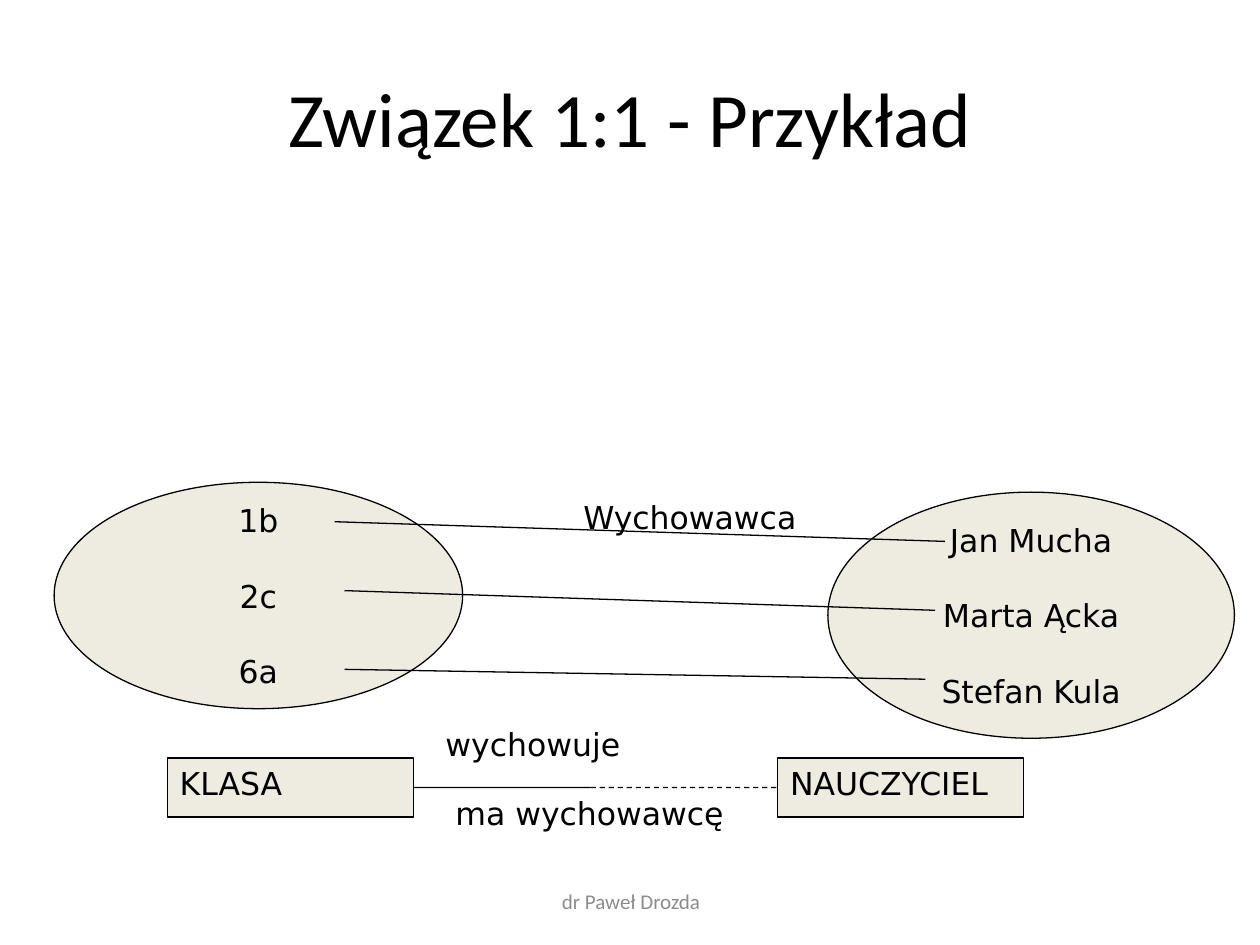
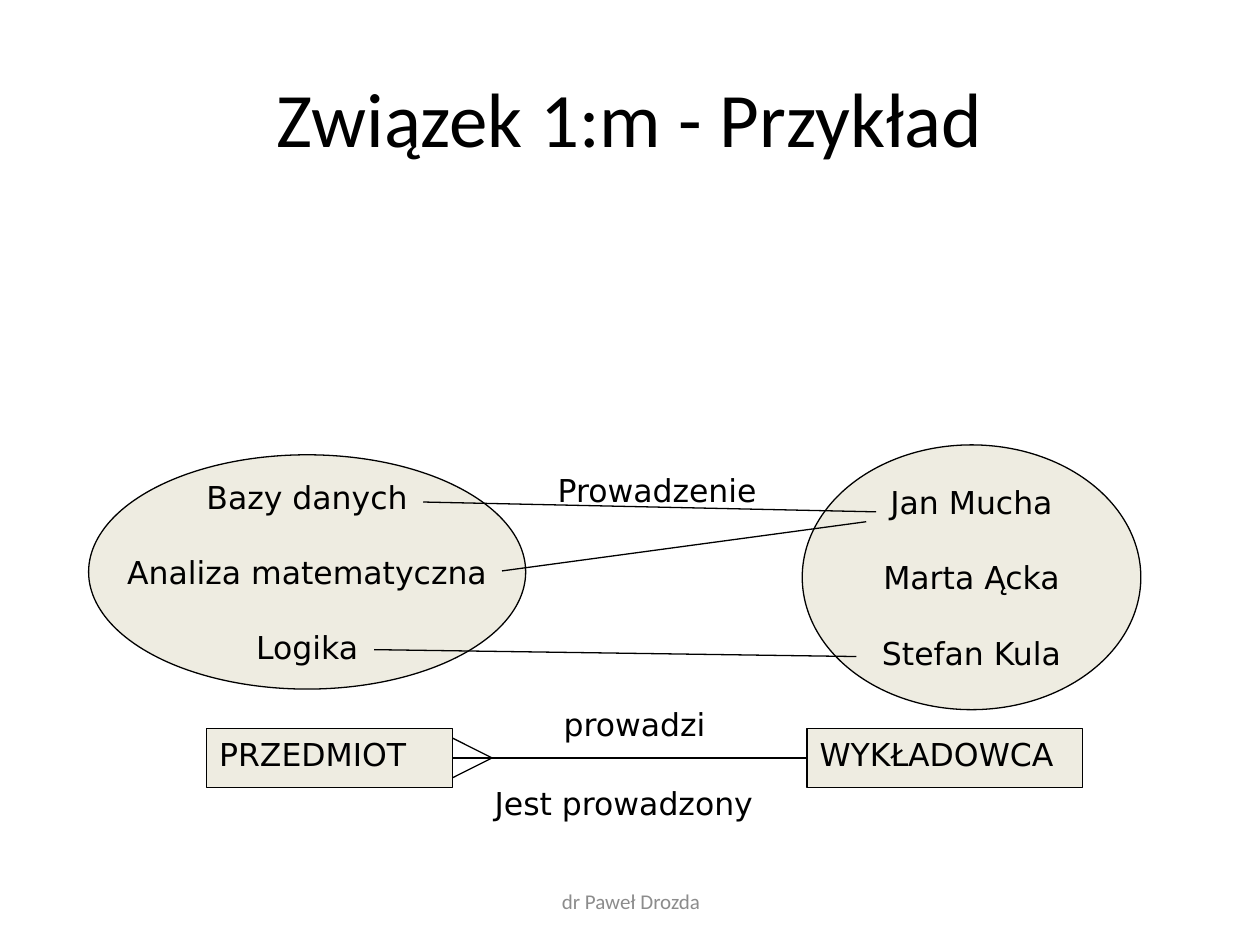
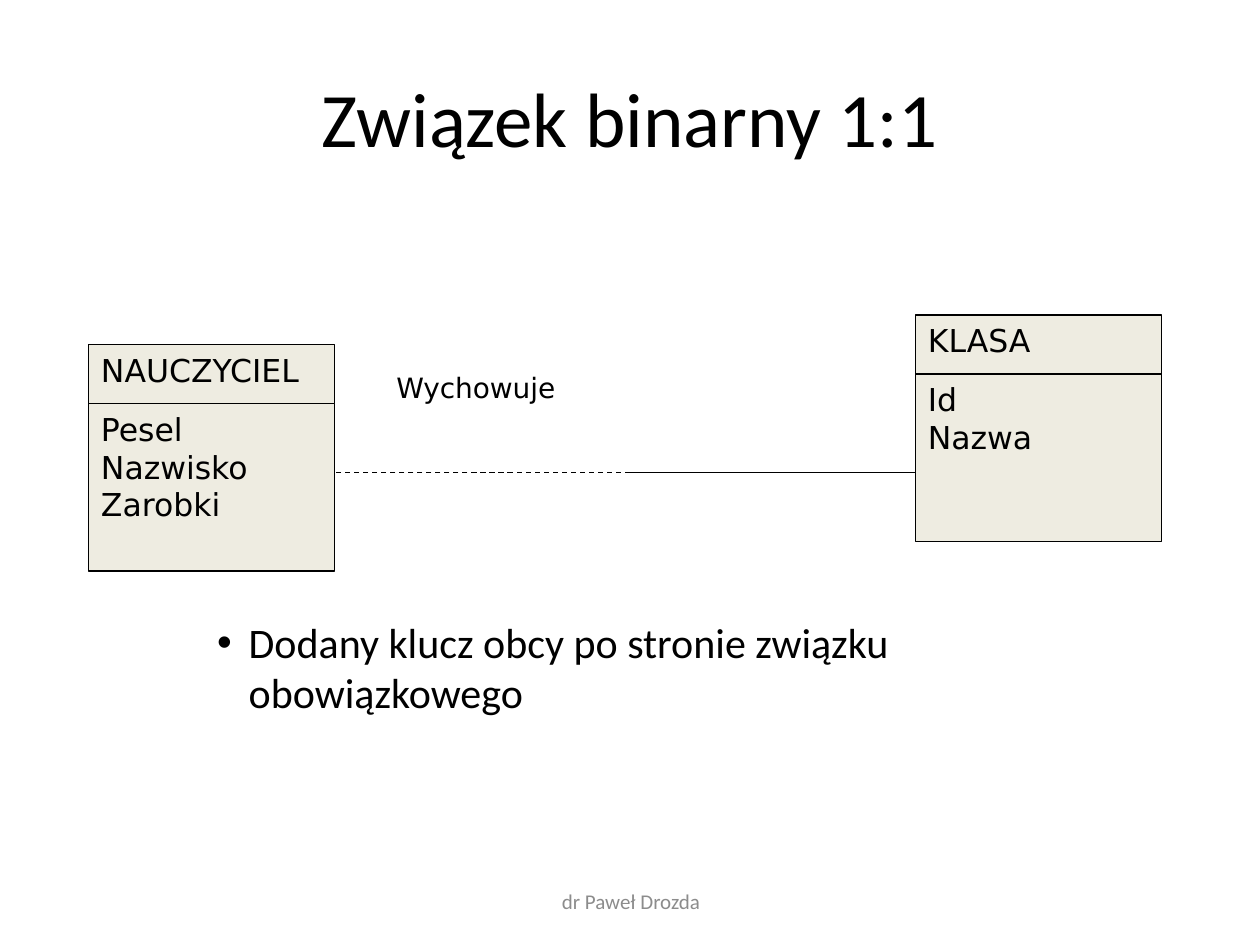
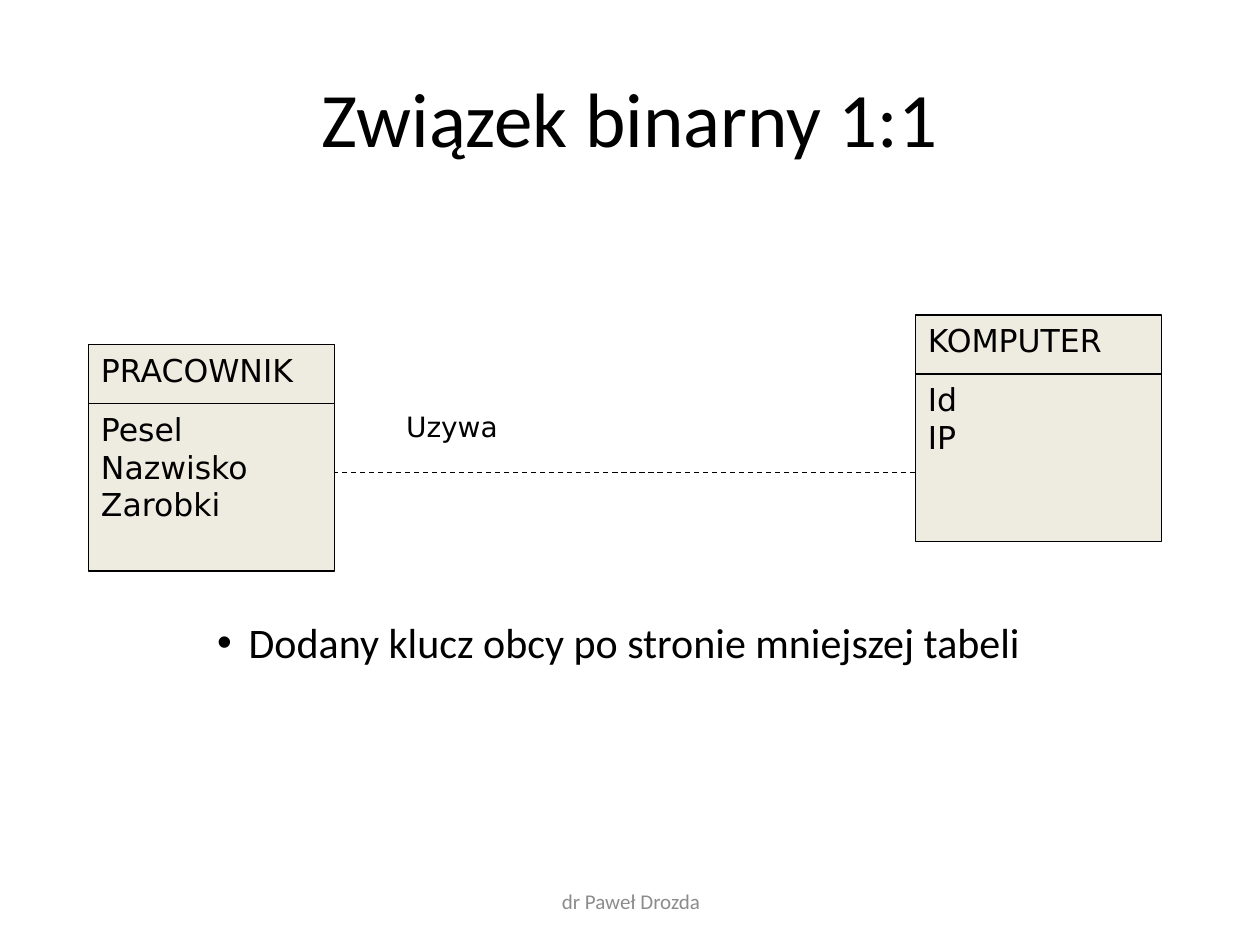
from pptx import Presentation
from pptx.dml.color import RGBColor
from pptx.enum.dml import MSO_LINE
from pptx.enum.shapes import MSO_CONNECTOR, MSO_SHAPE
from pptx.enum.text import MSO_ANCHOR, MSO_AUTO_SIZE, PP_ALIGN
from pptx.oxml.ns import qn
from pptx.util import Inches, Pt
from lxml import etree

RECT, OVAL = MSO_SHAPE.RECTANGLE, MSO_SHAPE.OVAL
STRAIGHT, DASH = MSO_CONNECTOR.STRAIGHT, MSO_LINE.DASH
TOP, MIDDLE = MSO_ANCHOR.TOP, MSO_ANCHOR.MIDDLE
LEFT, CENTER = PP_ALIGN.LEFT, PP_ALIGN.CENTER
GROW = MSO_AUTO_SIZE.SHAPE_TO_FIT_TEXT
LEFT_SIDE, RIGHT_SIDE = 1, 3

INK, PAPER, GREY = "000000", "EEECE1", "8C8C8C"
HEADING_FONT, DIAGRAM_FONT = "Calibri", "DejaVu Sans"
AUTHOR = "dr Paweł Drozda"

# All places are in cells of a grid, 128 columns by 96 rows.
WIDTH, HEIGHT, COLUMNS = 10, 7.5, 128
TITLE_AREA = (6.4, 3.84, 115.2, 16)
FOOTER_AREA = (43.8, 89, 40.6, 5.1)
BODY_AREA = (8, 62, 112, 22.3)
ENTITY_W, HEADER_H, ATTRIBUTES_H, LABEL_H = 25, 6, 17, 5.1
FOOT_LENGTH, FOOT_SPREAD = 4, 2
TEACHERS = ["Jan Mucha", "Marta Ącka", "Stefan Kula"]

EXAMPLES = [
    {
        "title": "Związek 1:1 - Przykład",
        "sets": [
            (["1b", "2c", "6a"], (5.5, 49, 41.5, 23)),
            (TEACHERS, (84.1, 50, 41.3, 25)),
        ],
        "pairs": [((96, 55), (34, 53)), ((95, 62), (35, 60)), ((94, 69), (35, 68))],
        "relation": ("Wychowawca", 58, 50),
        "entities": [("KLASA", 17, ENTITY_W), ("NAUCZYCIEL", 79, ENTITY_W)],
        "entity_row": 77,
        "optional_from": 60,
        "many": False,
        "roles": [("wychowuje", 44, 73, 20.5), ("ma wychowawcę", 45, 80, 29.8)],
    },
    {
        "title": "Związek 1:m - Przykład",
        "sets": [
            (["Bazy danych", "Analiza matematyczna", "Logika"], (9, 46.2, 44.4, 23.8)),
            (TEACHERS, (81.5, 45.2, 34.4, 26.9)),
        ],
        "pairs": [((89, 52), (43, 51)), ((88, 53), (51, 58)), ((87, 66.7), (38, 66))],
        "relation": ("Prowadzenie", 55.4, 47.2),
        "entities": [("PRZEDMIOT", 21, ENTITY_W), ("WYKŁADOWCA", 82, 28)],
        "entity_row": 74,
        "optional_from": None,
        "many": True,
        "roles": [("prowadzi", 56, 71, 17.2), ("Jest prowadzony", 49, 79, 29.6)],
    },
]

ENTITY_PLACES = [(9, 35), (93, 32)]
RELATION_ROW, RELATION_MIDDLE = 48, 64
PERSON = ["Pesel", "Nazwisko", "Zarobki"]
BINARIES = [
    {
        "title": "Związek binarny 1:1",
        "entities": [("NAUCZYCIEL", PERSON), ("KLASA", ["Id", "Nazwa"])],
        "relation": ("Wychowuje", 39, 37),
        "right_required": True,
        "rule": "Dodany klucz obcy po stronie związku obowiązkowego",
    },
    {
        "title": "Związek binarny 1:1",
        "entities": [("PRACOWNIK", PERSON), ("KOMPUTER", ["Id", "IP"])],
        "relation": ("Uzywa", 40, 41),
        "right_required": False,
        "rule": "Dodany klucz obcy po stronie mniejszej tabeli",
    },
]


def cells(*counts):
    return [Inches(count * WIDTH / COLUMNS) for count in counts]


def color(hex_code):
    return RGBColor.from_string(hex_code)


def write(shape, lines, size=18, font=DIAGRAM_FONT, ink=INK, align=LEFT,
          anchor=TOP, wrap=True, gap=0):
    frame = shape.text_frame
    frame.word_wrap = wrap
    frame.vertical_anchor = anchor
    for number, line in enumerate(lines):
        paragraph = frame.add_paragraph() if number else frame.paragraphs[0]
        paragraph.alignment = align
        if number and gap:
            paragraph.space_before = Pt(gap)
        run = paragraph.add_run()
        run.text = line
        run.font.size = Pt(size)
        run.font.name = font
        run.font.color.rgb = color(ink)


def add_text(slide, text, area, **style):
    box = slide.shapes.add_textbox(*cells(*area))
    write(box, [text], **style)
    return box


def add_label(slide, text, area, **style):
    add_text(slide, text, area, **style).text_frame.auto_size = GROW


def add_figure(slide, kind, lines, area, **style):
    figure = slide.shapes.add_shape(kind, *cells(*area))
    figure.shadow.inherit = False
    figure.fill.solid()
    figure.fill.fore_color.rgb = color(PAPER)
    figure.line.color.rgb = color(INK)
    figure.line.width = Pt(0.75)
    write(figure, lines, **style)
    return figure


def add_line(slide, start, end, dashed=False):
    line = slide.shapes.add_connector(STRAIGHT, *cells(*start, *end))
    line.line.color.rgb = color(INK)
    line.line.width = Pt(0.75)
    if dashed:
        line.line.dash_style = DASH
    etree.SubElement(line._element.spPr, qn("a:effectLst"))
    return line


def add_rule(slide, text):
    """Add the bulleted conclusion under a diagram."""
    box = add_text(slide, text, BODY_AREA, size=24, font=HEADING_FONT)
    properties = box.text_frame.paragraphs[0]._p.get_or_add_pPr()
    properties.set("marL", str(Inches(1.25)))
    properties.set("indent", str(Inches(-0.25)))
    etree.SubElement(properties, qn("a:buFont")).set("typeface", "Arial")
    etree.SubElement(properties, qn("a:buChar")).set("char", "•")


def start_slide(deck, title):
    slide = deck.slides.add_slide(deck.slide_layouts[6])
    centred = {"font": HEADING_FONT, "align": CENTER, "anchor": MIDDLE}
    add_text(slide, title, TITLE_AREA, size=44, **centred)
    add_text(slide, AUTHOR, FOOTER_AREA, size=12, ink=GREY, **centred)
    return slide


def add_example(deck, example):
    slide = start_slide(deck, example["title"])
    for members, area in example["sets"]:
        add_figure(slide, OVAL, members, area, align=CENTER, anchor=MIDDLE,
                   wrap=False, gap=21.5)
    for start, end in example["pairs"]:
        add_line(slide, start, end)
    relation, x, y = example["relation"]
    add_label(slide, relation, (x, y, 28.2, LABEL_H))

    row = example["entity_row"]
    left, right = [add_figure(slide, RECT, [name], (x, row, width, HEADER_H))
                   for name, x, width in example["entities"]]
    (_, left_x, left_width), (_, right_x, _) = example["entities"]
    side, axis = left_x + left_width, row + HEADER_H / 2
    split = example["optional_from"]
    first = add_line(slide, (side, axis), (split or right_x, axis))
    first.begin_connect(left, RIGHT_SIDE)
    last = add_line(slide, (split, axis), (right_x, axis), dashed=True) if split else first
    last.end_connect(right, LEFT_SIDE)
    if example["many"]:
        for spread in (-FOOT_SPREAD, FOOT_SPREAD):
            add_line(slide, (side + FOOT_LENGTH, axis), (side, axis + spread))
    for role, x, y, width in example["roles"]:
        add_label(slide, role, (x, y, width, LABEL_H), wrap=False)


def add_binary(deck, binary):
    slide = start_slide(deck, binary["title"])
    add_rule(slide, binary["rule"])
    for (name, attributes), (x, y) in zip(binary["entities"], ENTITY_PLACES):
        add_figure(slide, RECT, attributes, (x, y + HEADER_H, ENTITY_W, ATTRIBUTES_H))
        add_figure(slide, RECT, [name], (x, y, ENTITY_W, HEADER_H))
    relation, x, y = binary["relation"]
    add_label(slide, relation, (x, y, 23, 8.2), size=16)

    left, right = ENTITY_PLACES[0][0] + ENTITY_W, ENTITY_PLACES[1][0]
    dash_end = RELATION_MIDDLE if binary["right_required"] else right
    add_line(slide, (dash_end, RELATION_ROW), (left, RELATION_ROW), dashed=True)
    if binary["right_required"]:
        add_line(slide, (right, RELATION_ROW), (RELATION_MIDDLE, RELATION_ROW))


def main():
    deck = Presentation()
    deck.slide_width, deck.slide_height = Inches(WIDTH), Inches(HEIGHT)
    for example in EXAMPLES:
        add_example(deck, example)
    for binary in BINARIES:
        add_binary(deck, binary)
    deck.save("out.pptx")


if __name__ == "__main__":
    main()
